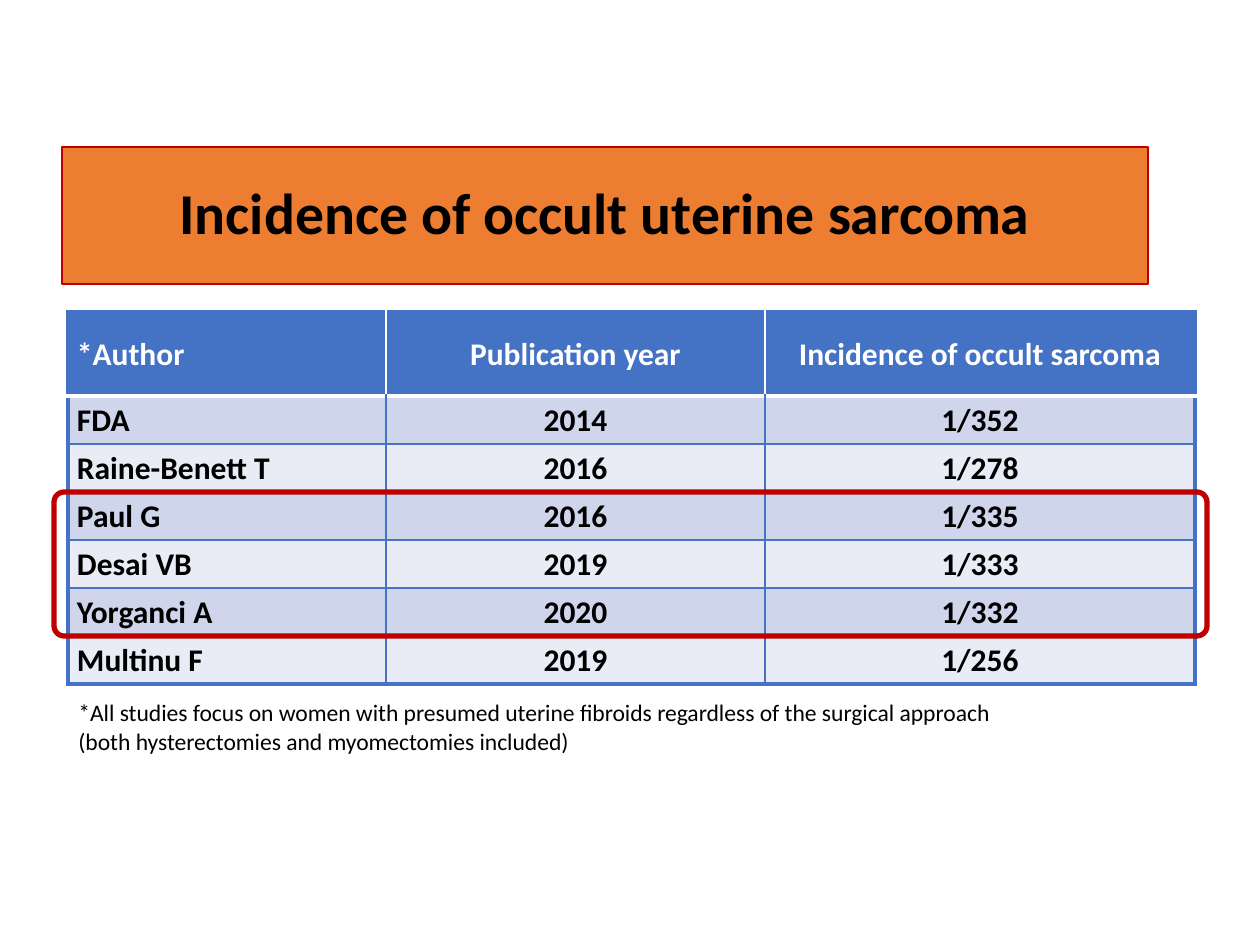
"""Build a slide with a table of occult uterine sarcoma incidence by study."""
from lxml import etree
from pptx import Presentation
from pptx import util as u
from pptx.dml.color import RGBColor
from pptx.enum import shapes, text
from pptx.oxml.ns import qn

TITLE = "Incidence of occult uterine sarcoma"
HEADER = ("*Author", "Publication year", "Incidence of occult sarcoma")
STUDIES = [
    ("FDA", "2014", "1/352"),
    ("Raine-Benett T", "2016", "1/278"),
    ("Paul G", "2016", "1/335"),
    ("Desai VB", "2019", "1/333"),
    ("Yorganci A", "2020", "1/332"),
    ("Multinu F", "2019", "1/256"),
]
FOOTNOTE = [
    "*All studies focus on women with presumed uterine fibroids regardless of the surgical approach",
    "(both hysterectomies and myomectomies included)",
]
COLORS = {
    "orange": "ED7D31", "red": "C00000", "blue": "4472C4", "band": "CFD5EA",
    "pale": "E9EBF5", "white": "FFFFFF", "black": "000000",
}
FONT = "Calibri"
COLUMN_WIDTHS = (318, 379, 430)
HEADER_HEIGHT, STUDY_HEIGHT = 84, 48
TABLE_LEFT, TABLE_TOP = 68, 312


def px(*lengths):
    return [u.Emu(round(length * 914400 / 126)) for length in lengths]


def rgb(name):
    return RGBColor.from_string(COLORS[name])


def write(paragraph, words, size, color="black", bold=False, align=text.PP_ALIGN.LEFT):
    paragraph.alignment = align
    run = paragraph.add_run()
    run.text = words
    run.font.name, run.font.size, run.font.bold = FONT, u.Pt(size), bold
    run.font.color.rgb = rgb(color)


def set_border(cell, side, color, points):
    border = etree.SubElement(cell._tc.get_or_add_tcPr(), qn(f"a:ln{side}"), w=str(u.Pt(points)))
    fill = etree.SubElement(border, qn("a:solidFill"))
    etree.SubElement(fill, qn("a:srgbClr"), val=COLORS[color])


def add_title(slide):
    title = slide.shapes.title
    title.left, title.top, title.width, title.height = px(62, 147, 1086, 137)
    title.fill.solid()
    title.fill.fore_color.rgb = rgb("orange")
    title.line.color.rgb = rgb("red")
    title.line.width = u.Pt(0.75)
    title.text_frame.vertical_anchor = text.MSO_ANCHOR.MIDDLE
    paragraph = title.text_frame.paragraphs[0]
    paragraph.line_spacing = 0.9
    write(paragraph, TITLE, 33, bold=True, align=text.PP_ALIGN.CENTER)


def format_cell(cell, row, column, words):
    is_header = row == 0
    last_row, last_column = len(STUDIES), len(HEADER) - 1
    inner = ("white" if is_header else "blue", 1)
    outer, divider = ("blue", 2.25), ("white", 3)
    borders = {
        "L": outer if column == 0 else inner,
        "R": outer if column == last_column else inner,
        "T": outer if is_header else divider if row == 1 else inner,
        "B": divider if is_header else outer if row == last_row else inner,
    }
    for side, (color, points) in borders.items():
        set_border(cell, side, color, points)
    cell.fill.solid()
    cell.fill.fore_color.rgb = rgb("blue" if is_header else "band" if row % 2 else "pale")
    cell.vertical_anchor = text.MSO_ANCHOR.MIDDLE
    cell.margin_left, cell.margin_top, cell.margin_right, cell.margin_bottom = px(9, 5, 9, 4)
    write(cell.text_frame.paragraphs[0], words, 18, "white" if is_header else "black", True,
          text.PP_ALIGN.CENTER if column else text.PP_ALIGN.LEFT)


def add_studies(slide):
    rows = [HEADER, *STUDIES]
    heights = [HEADER_HEIGHT] + [STUDY_HEIGHT] * len(STUDIES)
    studies = slide.shapes.add_table(
        len(rows), len(HEADER),
        *px(TABLE_LEFT, TABLE_TOP, sum(COLUMN_WIDTHS), sum(heights))).table
    for column, width in zip(studies.columns, px(*COLUMN_WIDTHS)):
        column.width = width
    for row, height in zip(studies.rows, px(*heights)):
        row.height = height
    for r, row in enumerate(rows):
        for c, words in enumerate(row):
            format_cell(studies.cell(r, c), r, c, words)


def add_footnote(slide):
    frame = slide.shapes.add_textbox(*px(66, 692, 1079, 71)).text_frame
    frame.word_wrap = True
    for i, line in enumerate(FOOTNOTE):
        write(frame.add_paragraph() if i else frame.paragraphs[0], line, 13.5)


def add_highlight(slide):
    highlight = slide.shapes.add_shape(
        shapes.MSO_SHAPE.ROUNDED_RECTANGLE, *px(54, 492, 1153, 144))
    highlight.adjustments[0] = 0.07
    highlight.shadow.inherit = False
    highlight.fill.background()
    highlight.line.color.rgb = rgb("red")
    highlight.line.width = u.Pt(3)


def main():
    deck = Presentation()
    deck.slide_width, deck.slide_height = px(1260, 945)
    slide = deck.slides.add_slide(deck.slide_layouts[5])
    add_title(slide)
    add_studies(slide)
    add_footnote(slide)
    add_highlight(slide)
    deck.save("out.pptx")


if __name__ == "__main__":
    main()
